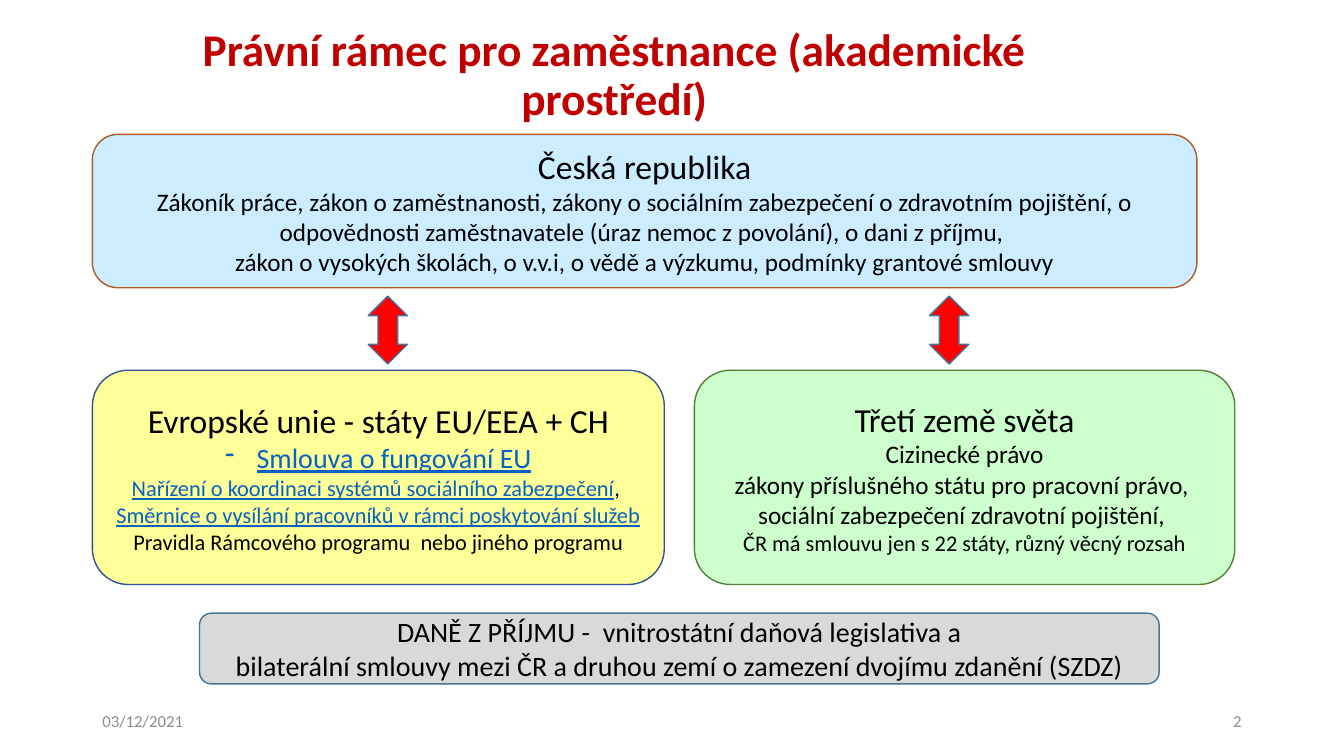
import pptx
import pptx.dml.color
import pptx.enum.shapes
import pptx.enum.text
import pptx.oxml.ns
import pptx.util
from lxml import etree

Pt = pptx.util.Pt
RGBColor = pptx.dml.color.RGBColor
Shape = pptx.enum.shapes.MSO_SHAPE
Align = pptx.enum.text.PP_ALIGN
Anchor = pptx.enum.text.MSO_ANCHOR

BLACK = RGBColor(0x00, 0x00, 0x00)
GREY = RGBColor(0x8C, 0x8C, 0x8C)
DARK_RED = RGBColor(0xC0, 0x00, 0x00)
RED = RGBColor(0xFF, 0x00, 0x00)
LINK_BLUE = RGBColor(0x05, 0x63, 0xC1)
STEEL = RGBColor(0x43, 0x73, 0x9E)
PALE_BLUE, BROWN = RGBColor(0xCC, 0xEC, 0xFF), RGBColor(0xAF, 0x5C, 0x24)
PALE_YELLOW, NAVY = RGBColor(0xFF, 0xFF, 0x99), RGBColor(0x32, 0x54, 0x91)
PALE_GREEN, GREEN = RGBColor(0xCC, 0xFF, 0xCC), RGBColor(0x53, 0x80, 0x35)
PALE_GREY = RGBColor(0xD9, 0xD9, 0xD9)

LEFT = 66
ROW_TOP, ROW_HEIGHT = 264.5, 153
HEADING, LARGE, BODY, SMALL = 24, 20, 18, 16


class SlideBuilder:
    font_name = "Calibri"

    def __init__(self, page):
        self.page = page

    def style(self, para, size, color, align=Align.CENTER):
        para.alignment = align
        para.font.name = self.font_name
        para.font.size = Pt(size)
        para.font.color.rgb = color

    def title(self, text, left, top, width, height):
        box = self.page.shapes.title
        box.left, box.top, box.width, box.height = Pt(left), Pt(top), Pt(width), Pt(height)
        frame = box.text_frame
        frame.text = text
        frame.auto_size = pptx.enum.text.MSO_AUTO_SIZE.NONE
        frame.vertical_anchor = Anchor.MIDDLE
        para = frame.paragraphs[0]
        self.style(para, 32.4, DARK_RED)
        para.font.bold = True
        para.line_spacing = 0.9

    def footer(self, text, left, align):
        box = self.page.shapes.add_textbox(Pt(left), Pt(500.5), Pt(216), Pt(28.75))
        frame = box.text_frame
        frame.word_wrap = True
        frame.vertical_anchor = Anchor.MIDDLE
        frame.text = text
        self.style(frame.paragraphs[0], 12, GREY, align)

    def shape(self, kind, left, top, width, height, fill, line):
        shape = self.page.shapes.add_shape(kind, Pt(left), Pt(top), Pt(width), Pt(height))
        shape.shadow.inherit = False
        shape.fill.solid()
        shape.fill.fore_color.rgb = fill
        shape.line.color.rgb = line
        shape.line.width = Pt(1)
        return shape

    def panel(self, left, top, width, height, fill, line, lines):
        """Rounded box; each line is (size, text) or (size, text, link, bulleted)."""
        box = self.shape(Shape.ROUNDED_RECTANGLE, left, top, width, height, fill, line)
        frame = box.text_frame
        frame.word_wrap = True
        frame.vertical_anchor = Anchor.MIDDLE
        for index, (size, text, *link) in enumerate(lines):
            para = frame.paragraphs[0] if index == 0 else frame.add_paragraph()
            para.text = text
            self.style(para, size, BLACK)
            if link:
                self.mark_link(para, *link)

    def mark_link(self, para, tail="", bulleted=False):
        """Underline the first run in link blue, then add a plain black tail."""
        span = para.runs[0]
        span.font.color.rgb = LINK_BLUE
        span.font.underline = True
        if tail:
            para.add_run().text = tail
        if bulleted:
            properties = para._p.get_or_add_pPr()
            properties.set("marL", str(Pt(22.5)))
            properties.set("indent", str(-Pt(22.5)))
            bullet = etree.Element(pptx.oxml.ns.qn("a:buChar"), char="-")
            properties.insert(0, bullet)

    def arrow(self, left):
        self.shape(Shape.UP_DOWN_ARROW, left, 211.5, 28, 48.5, RED, STEEL)


def main():
    deck = pptx.Presentation()
    deck.slide_width, deck.slide_height = Pt(960), Pt(540)
    title_only = deck.slide_layouts.get_by_name("Title Only")
    slide = SlideBuilder(deck.slides.add_slide(title_only))

    slide.title("Právní rámec pro zaměstnance (akademické prostředí)", 85.5, 26, 706.5, 57.5)
    slide.footer("03/12/2021", LEFT, Align.LEFT)
    slide.footer("2", 678, Align.RIGHT)

    slide.panel(LEFT, 96, 789, 109.5, PALE_BLUE, BROWN, [
        (HEADING, "Česká republika"),
        (BODY, "Zákoník práce, zákon o zaměstnanosti, zákony o sociálním zabezpečení "
               "o zdravotním pojištění, o odpovědnosti zaměstnavatele "
               "(úraz nemoc z povolání), o dani z příjmu, "),
        (BODY, "zákon o vysokých školách, o v.v.i, o vědě a výzkumu, podmínky grantové smlouvy"),
    ])
    slide.panel(LEFT, ROW_TOP, 408.5, ROW_HEIGHT, PALE_YELLOW, NAVY, [
        (HEADING, "Evropské unie - státy EU/EEA + CH"),
        (LARGE, "Smlouva o fungování EU", "", True),
        (SMALL, "Nařízení o koordinaci systémů sociálního zabezpečení", ", "),
        (SMALL, "Směrnice o vysílání pracovníků v rámci poskytování služeb", ""),
        (SMALL, "Pravidla Rámcového programu  nebo jiného programu"),
    ])
    slide.panel(496, ROW_TOP, 386, ROW_HEIGHT, PALE_GREEN, GREEN, [
        (HEADING, "Třetí země světa"),
        (BODY, "Cizinecké právo"),
        (BODY, "zákony příslušného státu pro pracovní právo, "),
        (BODY, "sociální zabezpečení zdravotní pojištění, "),
        (SMALL, "ČR má smlouvu jen s 22 státy, různý věcný rozsah"),
    ])
    slide.panel(142.5, 438, 685.5, 50.5, PALE_GREY, STEEL, [
        (LARGE, "DANĚ Z PŘÍJMU -  vnitrostátní daňová legislativa a"),
        (LARGE, "bilaterální smlouvy mezi ČR a druhou zemí o zamezení dvojímu zdanění (SZDZ)"),
    ])
    for left in (263, 664):
        slide.arrow(left)

    deck.save("out.pptx")


if __name__ == "__main__":
    main()
